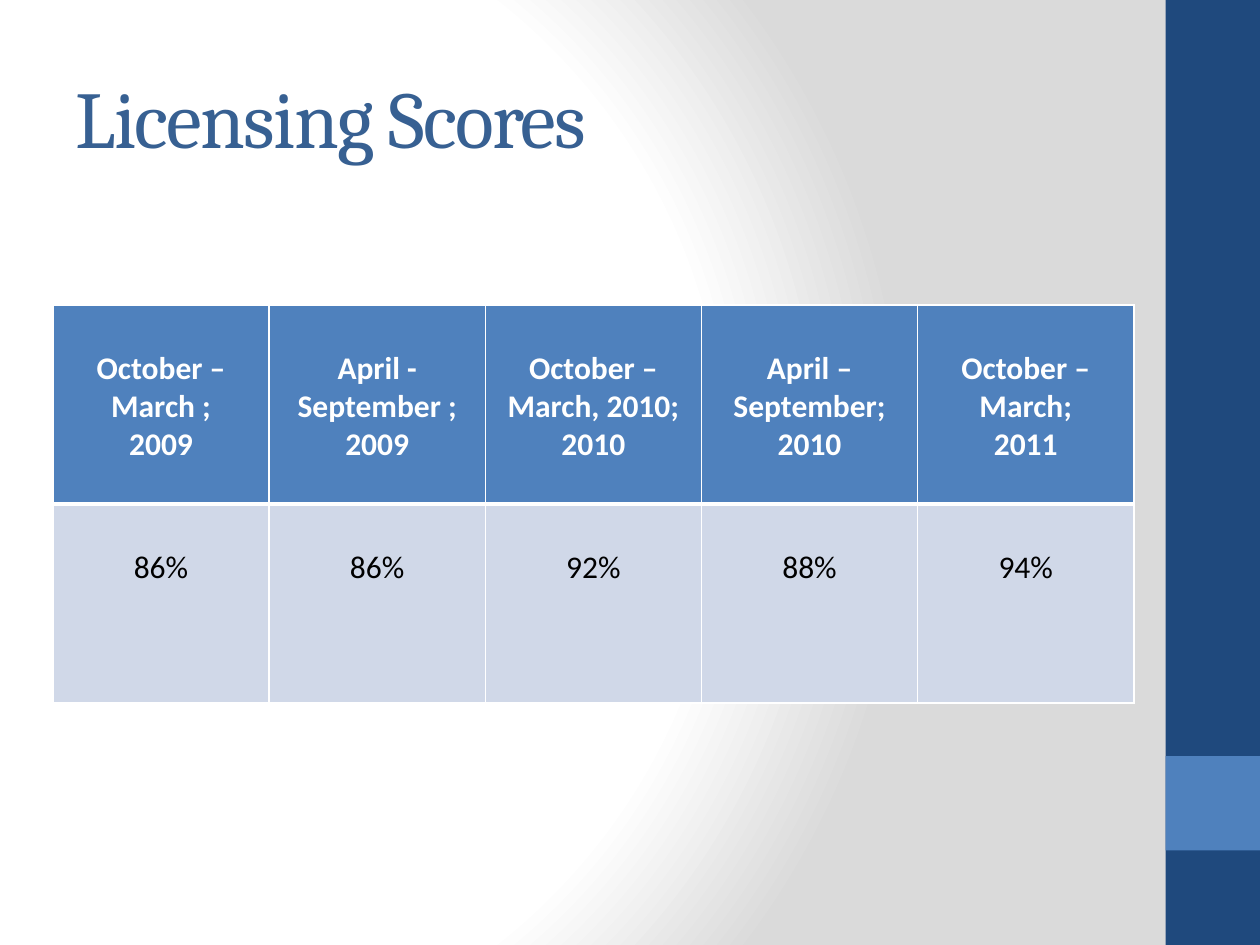
from typing import NamedTuple

from lxml.etree import SubElement
from pptx import Presentation
from pptx.dml.color import RGBColor
from pptx.enum.shapes import MSO_SHAPE as Shape
from pptx.enum.text import MSO_ANCHOR as Anchor, PP_ALIGN as Align
from pptx.oxml import parse_xml
from pptx.oxml.ns import nsdecls, qn
from pptx.util import Inches, Pt

COLORS = {
    "navy": "1F497D",
    "blue": "4F81BD",
    "title": "376092",
    "pale": "D0D8E8",
    "white": "FFFFFF",
    "gray": "DADADA",
    "black": "000000",
}


class Band(NamedTuple):
    top: float
    height: float
    color: str


class Score(NamedTuple):
    period: str
    rate: str


class RowStyle(NamedTuple):
    fill: str
    text: str
    bold: bool
    borders: dict[str, float]


BANDS = [Band(0, 7.5, "navy"), Band(6, 0.75, "blue")]
SCORES = [
    Score("October – March ;\n2009", "86%"),
    Score("April - September ; 2009", "86%"),
    Score("October – March, 2010; 2010", "92%"),
    Score("April – September; 2010", "88%"),
    Score("October – March;\n2011", "94%"),
]
HEADER = RowStyle("blue", "white", True, {"lnL": 1, "lnR": 1, "lnT": 1, "lnB": 3})
BODY = RowStyle("pale", "black", False, {"lnL": 1, "lnR": 1, "lnT": 3, "lnB": 1})
TABLE_WIDTH = 8.58
ROW_HEIGHT = 1.58


def rgb(name: str) -> RGBColor:
    return RGBColor.from_string(COLORS[name])


def set_background(slide) -> None:
    stops = "".join(
        f'<a:gs pos="{position * 1000}"><a:srgbClr val="{COLORS[color]}"/></a:gs>'
        for position, color in ((0, "white"), (75, "white"), (100, "gray"))
    )
    background = parse_xml(
        f'<p:bg {nsdecls("p", "a")}><p:bgPr><a:gradFill rotWithShape="1">'
        f'<a:gsLst>{stops}</a:gsLst><a:path path="circle">'
        '<a:fillToRect l="20000" t="50000" r="100000" b="50000"/></a:path>'
        "</a:gradFill><a:effectLst/></p:bgPr></p:bg>"
    )
    slide.element.cSld.insert(0, background)


def add_band(slide, band: Band) -> None:
    shape = slide.shapes.add_shape(
        Shape.RECTANGLE, Inches(9.25), Inches(band.top), Inches(0.75), Inches(band.height)
    )
    shape.shadow.inherit = False
    shape.fill.solid()
    shape.fill.fore_color.rgb = rgb(band.color)
    shape.line.fill.background()


def format_title(slide) -> None:
    title = slide.shapes.title
    title.left, title.top = Inches(0.5), Inches(0.3)
    title.width, title.height = Inches(8.33), Inches(1.25)
    title.text_frame.text = "Licensing Scores"
    title.text_frame.vertical_anchor = Anchor.MIDDLE
    paragraph = title.text_frame.paragraphs[0]
    paragraph.alignment = Align.LEFT
    font = paragraph.font
    font.name, font.size = "Cambria", Pt(46)
    font.color.rgb = rgb("title")
    paragraph.runs[0]._r.get_or_add_rPr().set("spc", "-100")


def set_borders(cell, borders: dict[str, float]) -> None:
    properties = cell._tc.get_or_add_tcPr()
    for index, (side, width) in enumerate(borders.items()):
        line = SubElement(properties, qn(f"a:{side}"), w=str(Pt(width)))
        fill = SubElement(line, qn("a:solidFill"))
        SubElement(fill, qn("a:srgbClr"), val=COLORS["white"])
        properties.insert(index, line)


def format_cell(cell, text: str, style: RowStyle) -> None:
    cell.fill.solid()
    cell.fill.fore_color.rgb = rgb(style.fill)
    set_borders(cell, style.borders)
    cell.margin_top = Inches(0.35)
    cell.text = text
    for paragraph in cell.text_frame.paragraphs:
        paragraph.alignment = Align.CENTER
        font = paragraph.font
        font.name, font.size, font.bold = "Calibri", Pt(18), style.bold
        font.color.rgb = rgb(style.text)


def add_scores(slide, scores: list[Score]) -> None:
    table = slide.shapes.add_table(
        2, len(scores), Inches(0.42), Inches(2.42),
        Inches(TABLE_WIDTH), Inches(ROW_HEIGHT * 2),
    ).table
    for index, score in enumerate(scores):
        format_cell(table.cell(0, index), score.period, HEADER)
        format_cell(table.cell(1, index), score.rate, BODY)


def main() -> None:
    presentation = Presentation()
    presentation.slide_width, presentation.slide_height = Inches(10), Inches(7.5)
    slide = presentation.slides.add_slide(presentation.slide_layouts[5])
    set_background(slide)
    for band in BANDS:
        add_band(slide, band)
    format_title(slide)
    add_scores(slide, SCORES)
    presentation.save("out.pptx")


if __name__ == "__main__":
    main()
